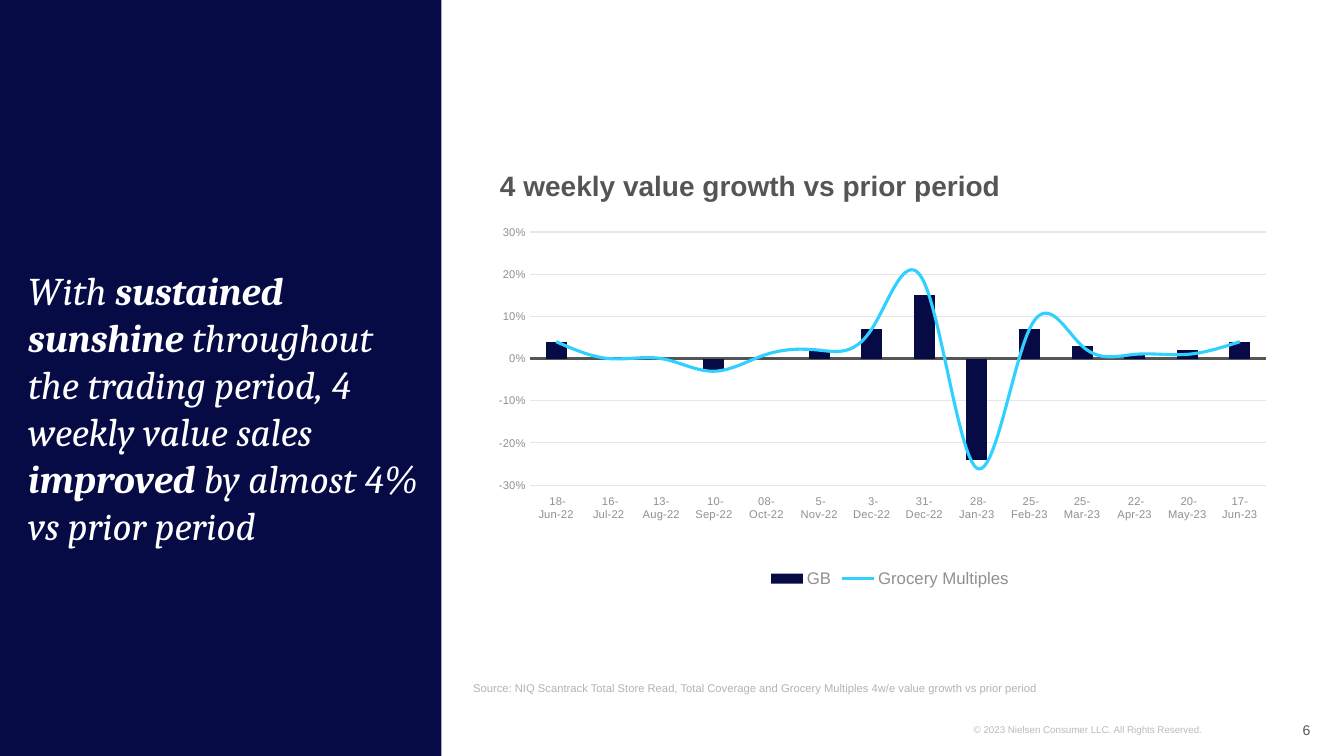
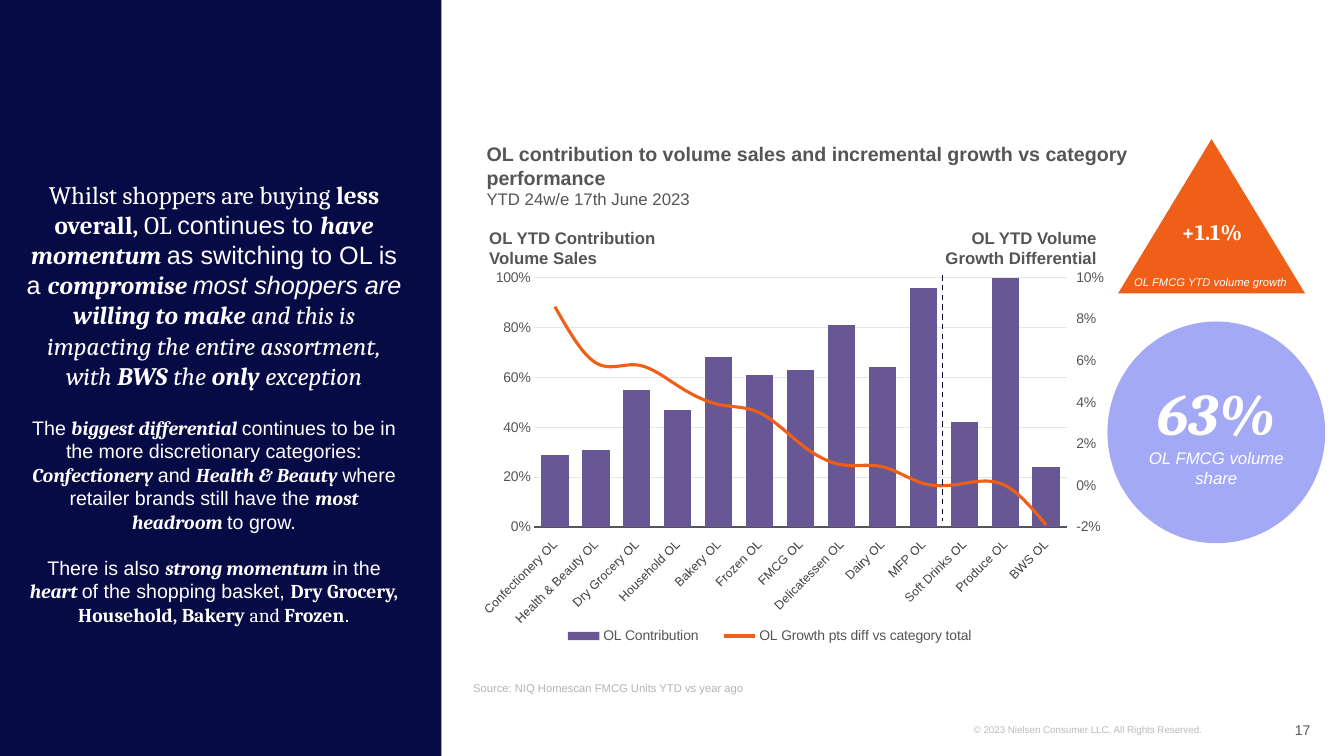
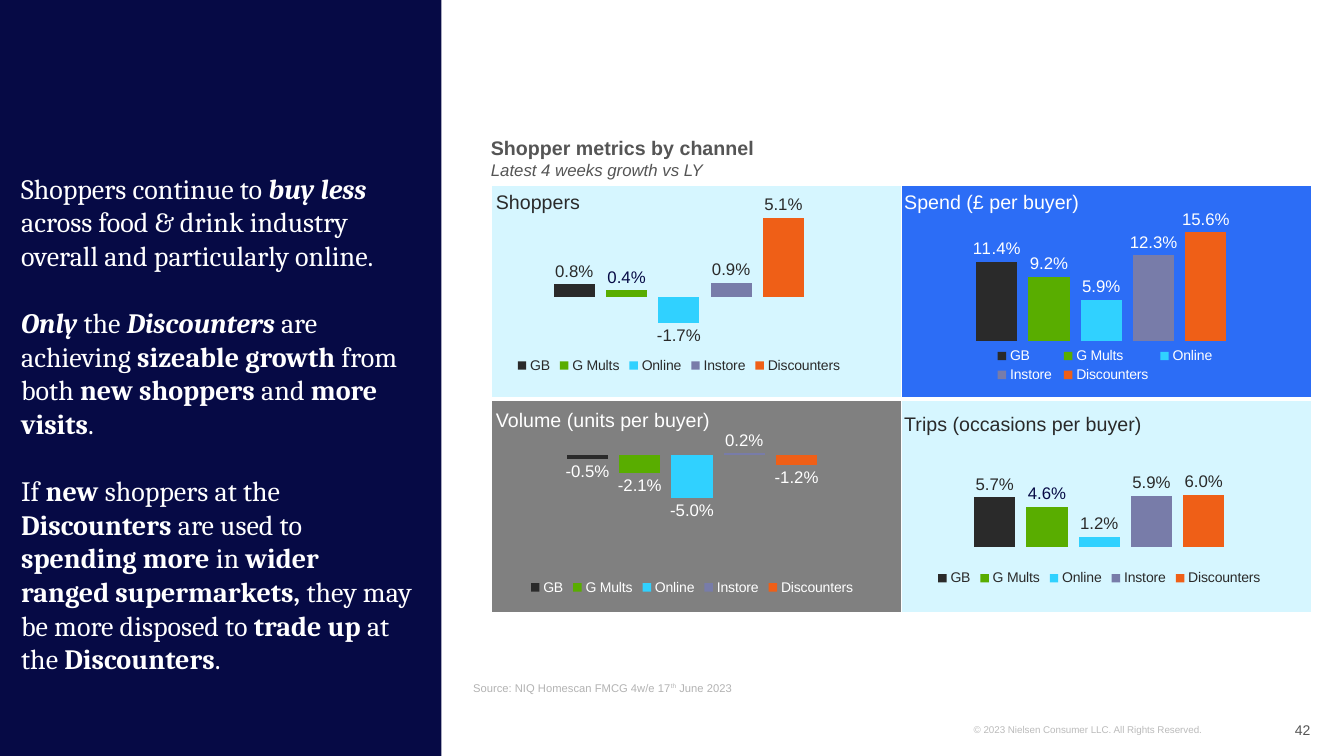
from pptx import Presentation, oxml, util as u
from pptx.chart import axis as axes
from pptx.chart.data import CategoryChartData
from pptx.dml.color import RGBColor
from pptx.enum import chart as charts, dml, shapes, text
from pptx.oxml.ns import nsdecls, qn

NAVY, WHITE, INK, GREY = "060A45", "FFFFFF", "2A2A2A", "555555"
CYAN, ORANGE, ICE, BLUE = "30D1FF", "EF5F17", "D6F6FF", "2C6DF6"
SANS, SERIF = "Arial", "Cambria"
CENTER, RIGHT = text.PP_ALIGN.CENTER, text.PP_ALIGN.RIGHT
TOP, MIDDLE, BOTTOM = (text.MSO_ANCHOR.TOP, text.MSO_ANCHOR.MIDDLE,
                       text.MSO_ANCHOR.BOTTOM)


def paint(value):
    return RGBColor.from_string(value)


def fill(target, color):
    target.fill.solid()
    target.fill.fore_color.rgb = paint(color)


def style_font(font, size, color, name=SANS, bold=False, italic=False):
    font.size, font.name, font.bold, font.italic = u.Pt(size), name, bold, italic
    font.color.rgb = paint(color)


def add_span(para, words, flags="", size=12, color=GREY, name=SANS, bold=False, italic=False):
    span = para.add_run()
    span.text = words
    style_font(span.font, size, color, SANS if "a" in flags else name,
               bold or "b" in flags, italic or "i" in flags)
    if "s" in flags:
        span._r.get_or_add_rPr().set("baseline", "30000")


def block(spans, **style):
    return spans, style


def write(frame, blocks, anchor=TOP, inset=(0, 0.05), align=text.PP_ALIGN.LEFT, **style):
    frame.word_wrap = True
    frame.auto_size = text.MSO_AUTO_SIZE.NONE
    frame.vertical_anchor = anchor
    frame.margin_left = frame.margin_right = u.Inches(inset[0])
    frame.margin_top = frame.margin_bottom = u.Inches(inset[1])
    if isinstance(blocks, str):
        blocks = [block(blocks)]
    for index, (spans, own) in enumerate(blocks):
        para = frame.add_paragraph() if index else frame.paragraphs[0]
        look = {**style, **own}
        para.alignment = align
        para.space_before = u.Pt(look.pop("before", 0))
        for words, flags in [(spans, "")] if isinstance(spans, str) else spans:
            add_span(para, words, flags, **look)


def place(parent, area, inner=False, after=None):
    for old in parent.findall(qn("c:layout")):
        parent.remove(old)
    target = '<c:layoutTarget val="inner"/>' if inner else ""
    modes = '<c:xMode val="edge"/><c:yMode val="edge"/>'
    sizes = "".join(f'<c:{key} val="{value}"/>' for key, value in zip("xywh", area))
    layout = oxml.parse_xml(f'<c:layout {nsdecls("c")}><c:manualLayout>{target}{modes}{sizes}'
                            '</c:manualLayout></c:layout>')
    if after is None:
        parent.insert(0, layout)
    else:
        after.addnext(layout)


def set_scale(axis, low, high, step=None):
    axis.minimum_scale, axis.maximum_scale = low, high
    if step:
        axis.major_unit = step


def style_value_axis(axis, size, color, tick):
    axis.major_tick_mark, axis.minor_tick_mark = tick, charts.XL_TICK_MARK.NONE
    axis.tick_labels.number_format = "0%"
    axis.tick_labels.number_format_is_linked = False
    style_font(axis.tick_labels.font, size, color)
    axis.format.line.fill.background()


def split_line(chart):
    area = chart._chartSpace.chart.plotArea
    bars = area.find(qn("c:barChart"))
    series = bars.findall(qn("c:ser"))[1]
    for flag in series.findall(qn("c:invertIfNegative")):
        series.remove(flag)
    line = oxml.parse_xml(f'<c:lineChart {nsdecls("c")}><c:grouping val="standard"/>'
                          '<c:varyColors val="0"/><c:marker val="1"/>'
                          '<c:axId val="501"/><c:axId val="502"/></c:lineChart>')
    line.insert(2, series)
    bars.addnext(line)
    last = area.findall(qn("c:valAx"))[-1]
    made = []
    for tag, own, other, hidden, side, cross in (("valAx", 502, 501, 0, "r", "max"),
                                                 ("catAx", 501, 502, 1, "b", "autoZero")):
        made.append(oxml.parse_xml(
            f'<c:{tag} {nsdecls("c")}><c:axId val="{own}"/>'
            '<c:scaling><c:orientation val="minMax"/></c:scaling>'
            f'<c:delete val="{hidden}"/><c:axPos val="{side}"/>'
            '<c:majorTickMark val="none"/><c:minorTickMark val="none"/>'
            '<c:tickLblPos val="nextTo"/>'
            f'<c:crossAx val="{other}"/><c:crosses val="{cross}"/></c:{tag}>'))
        last.addnext(made[-1])
    return axes.ValueAxis(made[0])


class Deck:
    def __init__(self):
        self.deck = Presentation()
        self.deck.slide_width, self.deck.slide_height = u.Inches(13.33), u.Inches(7.5)
        self.layout = self.deck.slide_layouts[5]
        for holder in list(self.layout.placeholders)[1:]:
            holder.element.getparent().remove(holder.element)

    def spot(self, left, top, width, height):
        across, down = self.deck.slide_width / 100, self.deck.slide_height / 100
        return [int(left * across), int(top * down), int(width * across), int(height * down)]

    def start(self, number, source):
        self.page = self.deck.slides.add_slide(self.layout)
        if len(self.deck.slides) == 1:
            panel = self.shape(shapes.MSO_SHAPE.RECTANGLE, (0, 0, 32.85, 100), NAVY)
            rights = self.box((72.45, 95.07, 21.3, 2.93),
                              "© 2023 Nielsen Consumer LLC. All Rights Reserved.",
                              size=7, color="BBBBBB")
            for shared in (panel, rights):
                self.layout.shapes.element.append(shared.element)
        self.box((90.1, 93.87, 7.4, 5.33), str(number), anchor=MIDDLE, align=RIGHT, size=10)
        self.box((35.2, 87.2, 62.3, 5.33), source, anchor=BOTTOM, size=8, color="B3B3B3")

    def title(self, area, blocks, **style):
        title = self.page.shapes.title
        title.left, title.top, title.width, title.height = self.spot(*area)
        write(title.text_frame, blocks, **style)

    def box(self, area, blocks, **style):
        box = self.page.shapes.add_textbox(*self.spot(*area))
        write(box.text_frame, blocks, **style)
        return box

    def shape(self, kind, area, color):
        shape = self.page.shapes.add_shape(kind, *self.spot(*area))
        shape.shadow.inherit = False
        fill(shape, color)
        shape.line.fill.background()
        return shape

    def dashed(self, across, top, bottom):
        left, start, right, end = self.spot(across, top, across, bottom)
        line = self.page.shapes.add_connector(shapes.MSO_CONNECTOR.STRAIGHT,
                                              left, start, right, end)
        line.line.color.rgb = paint("030522")
        line.line.width = u.Pt(1)
        line.line.dash_style = dml.MSO_LINE.DASH
        line.element.spPr.append(oxml.parse_xml(f'<a:effectLst {nsdecls("a")}/>'))

    def tiles(self, area, colors):
        table = self.page.shapes.add_table(len(colors), len(colors[0]), *self.spot(*area)).table
        table.first_row = table.horz_banding = False
        for row, shades in enumerate(colors):
            for column, shade in enumerate(shades):
                cell = table.cell(row, column)
                fill(cell, shade)
                widths = {"L": 1, "R": 1, "T": 3 if row else 1, "B": 1 if row else 3}
                for index, (side, width) in enumerate(widths.items()):
                    cell._tc.get_or_add_tcPr().insert(index, oxml.parse_xml(
                        f'<a:ln{side} {nsdecls("a")} w="{u.Pt(width)}"><a:solidFill>'
                        f'<a:srgbClr val="{WHITE}"/></a:solidFill></a:ln{side}>'))

    def chart(self, area, categories, series, plot, legend_size, legend_color, legend=None):
        data = CategoryChartData(number_format="0.0%")
        data.categories = categories
        for name, values in series:
            data.add_series(name, values)
        chart = self.page.shapes.add_chart(charts.XL_CHART_TYPE.COLUMN_CLUSTERED,
                                           *self.spot(*area), data).chart
        style_font(chart.font, 10, GREY)
        chart.has_title = False
        chart.has_legend = True
        chart.legend.position = charts.XL_LEGEND_POSITION.BOTTOM
        chart.legend.include_in_layout = False
        style_font(chart.legend.font, legend_size, legend_color)
        if legend:
            holder = chart.legend._element
            place(holder, legend, after=holder.find(qn("c:legendPos")))
        place(chart._chartSpace.chart.plotArea, plot, inner=True)
        chart.plots[0].vary_by_categories = False
        return chart

    def combo(self, area, categories, series, plot, colors, left_scale, right_scale, gap,
              sizes, color, show_right=False, slant=False, legend=None):
        category_size, value_size, legend_size = sizes
        chart = self.chart(area, categories, series, plot, legend_size, color, legend)
        left = chart.value_axis
        right = split_line(chart)
        columns, lines = chart.plots
        columns.gap_width = gap
        fill(columns.series[0].format, colors[0])
        curve = lines.series[0]
        curve.smooth = True
        curve.marker.style = charts.XL_MARKER_STYLE.NONE
        curve.format.line.color.rgb = paint(colors[1])
        curve.format.line.width = u.Pt(2.25)
        ticks = charts.XL_TICK_MARK
        for axis, scale, tick in ((left, left_scale, ticks.NONE),
                                  (right, right_scale, ticks.OUTSIDE)):
            style_value_axis(axis, value_size, color, tick)
            set_scale(axis, *scale)
        right.visible = show_right
        grid = left.major_gridlines.format.line
        grid.color.rgb, grid.width = paint("E6E6E6"), u.Pt(0.75)
        base = chart.category_axis
        base.major_tick_mark = ticks.NONE
        base.tick_label_position = charts.XL_TICK_LABEL_POSITION.LOW
        style_font(base.tick_labels.font, category_size, color)
        base.format.line.color.rgb, base.format.line.width = paint(GREY), u.Pt(2)
        if slant:
            base._element.find(qn("c:txPr")).find(qn("a:bodyPr")).set("rot", "-2700000")

    def metric(self, corner, values, scale, color, accent, plot_top, legend):
        channels = {"GB": INK, "G Mults": "59AD00", "Online": CYAN,
                    "Instore": "787CA9", "Discounters": ORANGE}
        chart = self.chart((*corner, 27.53, 27.07), ["1"],
                           [(name, [value]) for name, value in zip(channels, values)],
                           (0.04, plot_top, 0.92, 0.68), 10, color, legend)
        chart.category_axis.visible = chart.value_axis.visible = False
        chart.value_axis.has_major_gridlines = False
        set_scale(chart.value_axis, *scale)
        chart.plots[0].gap_width, chart.plots[0].overlap = 219, -27
        for bar, shade in zip(chart.plots[0].series, channels.values()):
            bar.invert_if_negative = False
            fill(bar.format, shade)
            labels = bar.data_labels
            labels.show_value = True
            labels.number_format, labels.number_format_is_linked = "0.0%", False
            labels.position = charts.XL_LABEL_POSITION.OUTSIDE_END
            style_font(labels.font, 12, accent if bar.name == "G Mults" else color)


def growth_slide(deck):
    deck.start(6, "Source: NIQ Scantrack Total Store Read, Total Coverage and Grocery "
                  "Multiples 4w/e value growth vs prior period")
    deck.title((2.1, 34.6, 29.6, 38.6), [block([
        ("With ", ""), ("sustained sunshine ", "b"),
        ("throughout the trading period, 4 weekly value sales ", ""),
        ("improved ", "b"), ("by almost 4% vs prior period", "")])],
        anchor=BOTTOM, size=28, color=WHITE, name=SERIF, italic=True)
    deck.combo(
        (36.45, 29.73, 59.55, 48.53),
        [" 18-Jun-22", " 16-Jul-22", "13-Aug-22", " 10-Sep-22", "08-Oct-22", " 5-Nov-22",
         " 3-Dec-22", "31-Dec-22", " 28-Jan-23", " 25-Feb-23", "25-Mar-23", " 22-Apr-23",
         " 20-May-23", "17-Jun-23"],
        [("GB", [0.04, 0, 0, -0.03, 0, 0.02, 0.07, 0.15, -0.24, 0.07, 0.03, 0.01, 0.02, 0.04]),
         ("Grocery Multiples",
          [0.04, 0, 0, -0.03, 0.01, 0.02, 0.07, 0.18, -0.26, 0.07, 0.03, 0.01, 0.01, 0.04])],
        (0.05, 0.02, 0.92, 0.69), (NAVY, CYAN), (-0.3, 0.3, 0.1), (-0.3, 0.3, 0.1), 150,
        (8, 8, 12), "909090")
    deck.box((37.2, 20.93, 55.8, 5.73), "4 weekly value growth vs prior period",
             inset=(0, 0.1), size=20, bold=True)


def contribution_slide(deck):
    deck.start(17, "Source: NIQ Homescan FMCG Units YTD vs year ago")
    deck.title((36.2, 18.13, 48.4, 11.33), [
        block("OL contribution to volume sales and incremental growth vs category performance",
              size=14, bold=True),
        block("YTD 24w/e 17th June 2023")])
    deck.box((1, 23, 29.85, 64), [
        block([("Whilst shoppers are buying ", ""), ("less overall, ", "b"), ("OL ", ""),
               ("continues to ", "a"), ("have momentum ", "bi"),
               ("as switching to OL is a ", "a"), ("compromise ", "bi"),
               ("most shoppers are ", "ai"), ("willing to make ", "bi"),
               ("and this is impacting the entire assortment, with ", "i"), ("BWS", "bi"),
               (" the ", "i"), ("only", "bi"), (" exception", "i")], size=18),
        block([("The ", "a"), ("biggest differential ", "bi"),
               ("continues to be in the more discretionary categories: ", "a"),
               ("Confectionery ", "bi"), ("and ", "a"), ("Health & Beauty ", "bi"),
               ("where retailer brands still have the ", "a"), ("most headroom ", "bi"),
               ("to grow.", "a")], before=18),
        block([("There is also ", "a"), ("strong momentum ", "bi"), ("in the ", "a"),
               ("heart ", "bi"), ("of the shopping basket, ", "a"),
               ("Dry Grocery, Household, Bakery ", "b"), ("and ", ""), ("Frozen", "b"),
               (".", "a")], before=16)],
        inset=(0.1, 0.05), align=CENTER, size=14, color=WHITE, name=SERIF)
    deck.combo(
        (35.78, 25.93, 46.35, 60),
        [f"{name} OL" for name in
         ("Confectionery", "Health & Beauty", "Dry Grocery", "Household", "Bakery", "Frozen",
          "FMCG", "Delicatessen", "Dairy", "MFP", "Soft Drinks", "Produce", "BWS")],
        [("OL Contribution",
          [0.29, 0.31, 0.55, 0.47, 0.68, 0.61, 0.63, 0.81, 0.64, 0.96, 0.42, 1, 0.24]),
         ("OL Growth pts diff vs category total",
          [0.086, 0.059, 0.058, 0.048, 0.039, 0.035, 0.02, 0.01, 0.009, 0.001, 0.001, 0,
           -0.019])],
        (0.08, 0.18, 0.86, 0.55), ("675895", ORANGE), (0, 1, 0.2), (-0.02, 0.1, 0.02), 50,
        (9, 10, 10), GREY, show_right=True, slant=True, legend=(0.1, 0.94, 0.72, 0.06))
    deck.box((36.4, 29.47, 16, 6.67), [block("OL YTD Contribution"), block("Volume Sales")],
             bold=True)
    deck.box((64.3, 29.47, 17.3, 6.67), [block("OL YTD Volume"), block("Growth Differential")],
             align=RIGHT, bold=True)
    deck.dashed(70.13, 36.4, 68.93)
    deck.shape(shapes.MSO_SHAPE.ISOSCELES_TRIANGLE, (83.2, 18.4, 13.9, 20.4), ORANGE)
    deck.box((85.28, 28.13, 9.8, 4.93), "+1.1%", inset=(0.1, 0.05), align=CENTER, size=16,
             color=WHITE, name=SERIF, bold=True)
    deck.box((83.4, 35.73, 13.35, 3.2), "OL FMCG YTD volume growth", align=CENTER, size=8,
             color=WHITE, italic=True)
    share = deck.shape(shapes.MSO_SHAPE.OVAL, (82.4, 42.53, 16.2, 29.33), "A3A9F5")
    write(share.text_frame, [block("63%", size=42, name=SERIF, bold=True),
                             block("OL FMCG volume share")],
          anchor=MIDDLE, inset=(0.05, 0.05), align=CENTER, color=WHITE, italic=True)


def shopper_slide(deck):
    deck.start(42, [block([("Source: NIQ Homescan FMCG 4w/e 17", ""), ("th", "s"),
                           (" June 2023", "")])])
    deck.title((1.57, 22, 29.1, 68), [
        block([("Shoppers continue to ", ""), ("buy less ", "bi"),
               ("across food & drink industry overall and particularly online.", "")]),
        block([("Only", "bi"), (" the ", ""), ("Discounters", "bi"), (" are achieving ", ""),
               ("sizeable growth ", "b"), ("from both ", ""), ("new shoppers", "b"),
               (" and ", ""), ("more visits", "b"), (".", "")], before=24),
        block([("If ", ""), ("new ", "b"), ("shoppers at the ", ""), ("Discounters ", "b"),
               ("are used to ", ""), ("spending more", "b"), (" in ", ""),
               ("wider ranged supermarkets, ", "b"), ("they may be more disposed to ", ""),
               ("trade up ", "b"), ("at the ", ""), ("Discounters", "b"), (".", "")],
              before=24)],
        anchor=BOTTOM, size=20, color=WHITE, name=SERIF)
    deck.tiles((36.6, 24.53, 61, 56.53), [[ICE, BLUE], ["808080", ICE]])
    deck.box((36.53, 17.33, 62.4, 8), [
        block("Shopper metrics by channel", size=14, bold=True),
        block("Latest 4 weeks growth vs LY", italic=True)])
    row = (0.05, 0.83, 0.9, 0.1)
    for label, spot, corner, values, scale, color, accent, plot_top, legend in (
            ("Shoppers", (36.9, 24.53), (36.75, 24.53), (0.008, 0.004, -0.017, 0.009, 0.051),
             (-0.03, 0.06), INK, NAVY, 0.09, row),
            ("Spend (£ per buyer)", (67.28, 24.53), (68.18, 24.53),
             (0.114, 0.092, 0.059, 0.123, 0.156), (0, 0.2), WHITE, WHITE, 0.08,
             (0.2, 0.78, 0.62, 0.2)),
            ("Volume (units per buyer)", (36.9, 53.33), (37.73, 52.8),
             (-0.005, -0.021, -0.05, 0.002, -0.012), (-0.15, 0.01), WHITE, WHITE, 0.23,
             (0.05, 0.87, 0.9, 0.1)),
            ("Trips (occasions per buyer)", (67.28, 53.87), (68.03, 52.67),
             (0.057, 0.046, 0.012, 0.059, 0.06), (-0.01, 0.15), INK, NAVY, 0.09, row)):
        deck.metric(corner, values, scale, color, accent, plot_top, legend)
        deck.box((*spot, 28, 3.6), label, size=14, color=color)


def main():
    deck = Deck()
    growth_slide(deck)
    contribution_slide(deck)
    shopper_slide(deck)
    deck.deck.save("out.pptx")


if __name__ == "__main__":
    main()
